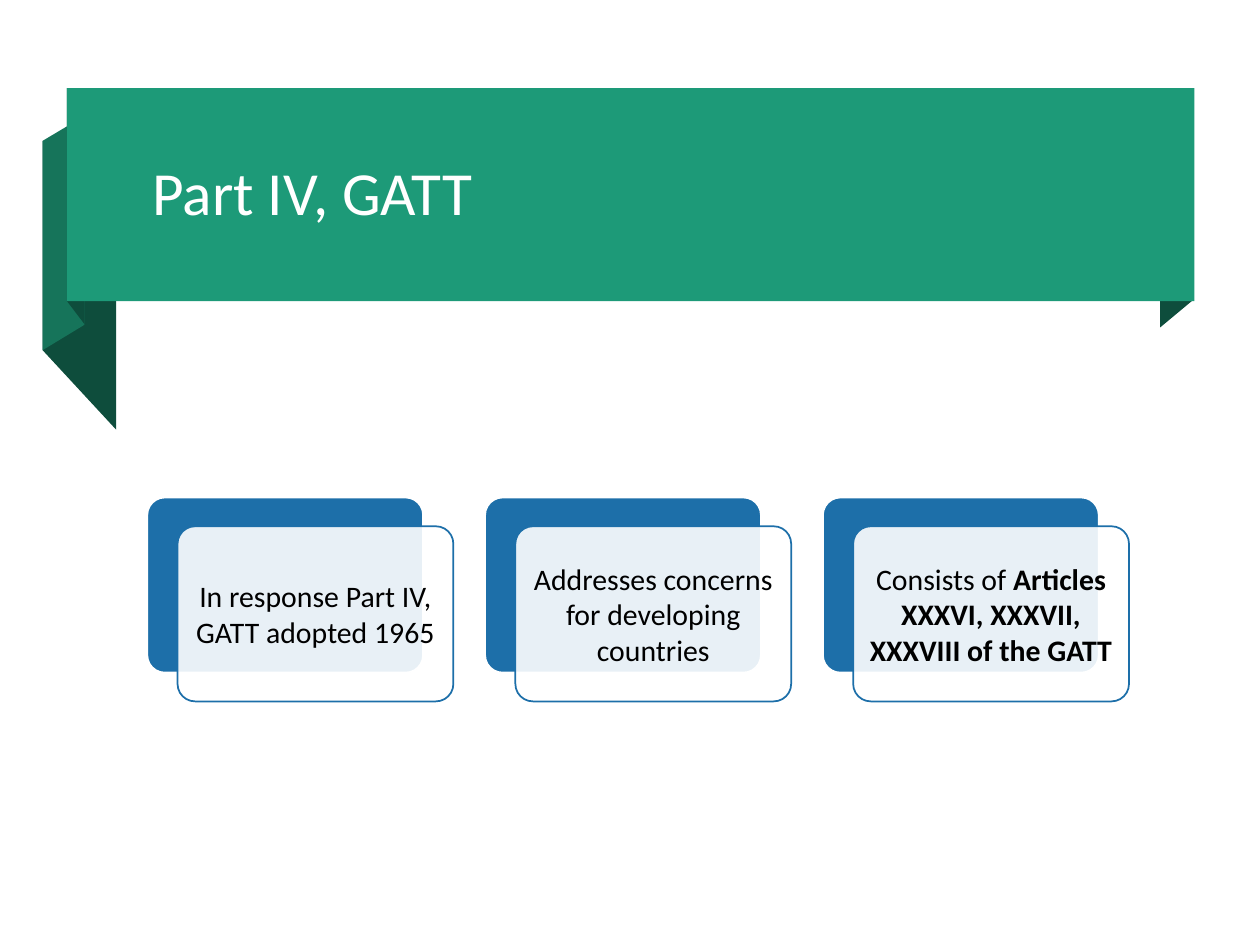
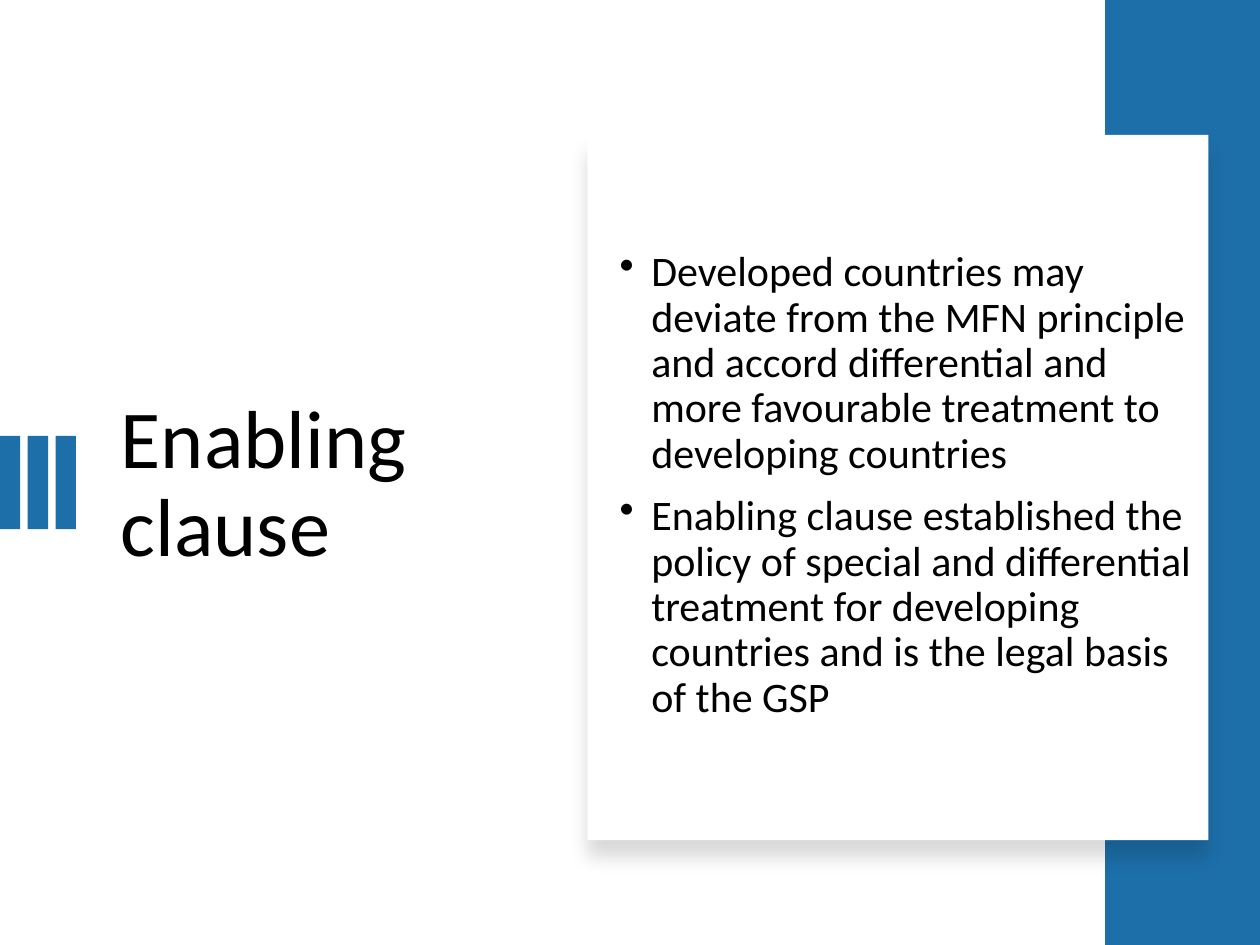
from dataclasses import dataclass
from typing import Optional

import lxml.etree
import pptx
import pptx.dml.color
import pptx.enum.shapes
import pptx.enum.text
import pptx.oxml.ns
import pptx.util

Cm, Pt = pptx.util.Cm, pptx.util.Pt
Kind = pptx.enum.shapes.MSO_SHAPE
Align = pptx.enum.text.PP_ALIGN
qn = pptx.oxml.ns.qn

FONT = "Calibri"
HUES = {
    "white": "FFFFFF",
    "black": "000000",
    "blue": "1D6FA9",
    "green": "1D9A78",
    "shade": "16745A",
    "deep": "0E4D3C",
}


@dataclass(frozen=True)
class Box:
    """Place and size in centimetres."""
    left: float
    top: float
    width: float
    height: float

    def shift(self, right: float, down: float = 0) -> "Box":
        return Box(self.left + right, self.top + down, self.width, self.height)

    def emu(self) -> list:
        return [Cm(v) for v in (self.left, self.top, self.width, self.height)]


@dataclass(frozen=True)
class Fold:
    """A ribbon fold: two upright edges joined by slanted ones."""
    hue: str
    left: float
    left_top: float
    left_end: float
    right: float
    right_top: float
    right_end: float


@dataclass(frozen=True)
class Card:
    text: str
    bold: str = ""


FOLDS = [
    Fold("deep", 23.39, 2.31, 6.6, 24.05, 1.78, 6.05),
    Fold("deep", 0.86, 2.84, 7.06, 2.34, 4.45, 8.66),
    Fold("shade", 0.86, 2.84, 7.06, 1.7, 2.34, 6.55),
    Fold("deep", 1.35, 1.78, 6.07, 1.7, 2.26, 6.53),
]
BANNER = Box(1.35, 1.78, 22.73, 4.29)

CARDS = [
    Card("In response Part IV, GATT adopted 1965"),
    Card("Addresses concerns for developing countries"),
    Card("Consists of ", "Articles XXXVI, XXXVII, XXXVIII of the GATT"),
]
CARD = Box(2.97, 10.03, 5.56, 3.53)
CARD_STEP = 6.81

BAR = Box(0, 8.79, 0.41, 1.88)
BAR_STEP = 0.56
STRIPE = Box(22.28, 0, 3.12, 19.05)
PANEL = Box(11.84, 2.72, 12.52, 14.22)
BODY = Box(12.24, 3.71, 12.04, 12.17)
POINTS = [
    "Developed countries may deviate from the MFN principle and accord "
    "differential and more favourable treatment to developing countries",
    "Enabling clause established the policy of special and differential "
    "treatment for developing countries and is the legal basis of the GSP",
]


def color(hue: str) -> pptx.dml.color.RGBColor:
    return pptx.dml.color.RGBColor.from_string(HUES[hue])


def paint(shape, hue: str, line: Optional[str] = None) -> None:
    shape.shadow.inherit = False
    shape.fill.solid()
    shape.fill.fore_color.rgb = color(hue)
    if line:
        shape.line.color.rgb = color(line)
        shape.line.width = Pt(1)
    else:
        shape.line.fill.background()


def add_rect(slide, box: Box, hue: str, line: Optional[str] = None,
             kind=Kind.RECTANGLE):
    shape = slide.shapes.add_shape(kind, *box.emu())
    paint(shape, hue, line)
    return shape


def add_fold(slide, fold: Fold) -> None:
    build = slide.shapes.build_freeform(Cm(fold.right), Cm(fold.right_end))
    ends = [(fold.left, fold.left_end), (fold.left, fold.left_top),
            (fold.right, fold.right_top)]
    build.add_line_segments([(Cm(x), Cm(y)) for x, y in ends], close=True)
    paint(build.convert_to_shape(), fold.hue)


def set_frame(frame) -> None:
    frame.word_wrap = True
    frame.auto_size = pptx.enum.text.MSO_AUTO_SIZE.NONE
    frame.vertical_anchor = pptx.enum.text.MSO_ANCHOR.MIDDLE


def style(para, size: float, hue: str, align=Align.LEFT, pitch: float = 0.9) -> None:
    para.alignment = align
    para.line_spacing = pitch
    for run in para.runs:
        run.font.name = FONT
        run.font.size = Pt(size)
        run.font.color.rgb = color(hue)


def set_title(slide, text: str, box: Box, size: float, hue: str) -> None:
    """Fill the title placeholder and bring it to the front."""
    title = slide.shapes.title
    title.left, title.top, title.width, title.height = box.emu()
    set_frame(title.text_frame)
    title.text_frame.text = text
    style(title.text_frame.paragraphs[0], size, hue)
    title.element.getparent().append(title.element)


def add_card(slide, card: Card, box: Box) -> None:
    back = add_rect(slide, box, "blue", "white", Kind.ROUNDED_RECTANGLE)
    front = add_rect(slide, box.shift(0.61, 0.58), "white", "blue",
                     Kind.ROUNDED_RECTANGLE)
    for shape in (back, front):
        shape.adjustments[0] = 0.1
    tint = front.element.spPr.find(qn("a:solidFill"))[0]
    lxml.etree.SubElement(tint, qn("a:alpha"), val="90000")

    frame = front.text_frame
    set_frame(frame)
    frame.margin_left = frame.margin_right = Cm(0.08)
    frame.margin_top = frame.margin_bottom = Cm(0.08)
    para = frame.paragraphs[0]
    para.text = card.text
    if card.bold:
        run = para.add_run()
        run.text = card.bold
        run.font.bold = True
    style(para, 17, "black", Align.CENTER, 1.0)


def add_glow(shape) -> None:
    """Cast a soft black shadow straight down."""
    effects = shape.element.spPr.find(qn("a:effectLst"))
    cast = lxml.etree.SubElement(
        effects, qn("a:outerShdw"), blurRad=str(Pt(11)), dist=str(Pt(10)),
        dir="5400000", algn="t", rotWithShape="0")
    tint = lxml.etree.SubElement(cast, qn("a:srgbClr"), val=HUES["black"])
    lxml.etree.SubElement(tint, qn("a:alpha"), val="15000")


def add_points(slide, points: list, box: Box) -> None:
    frame = slide.shapes.add_textbox(*box.emu()).text_frame
    set_frame(frame)
    for i, point in enumerate(points):
        para = frame.paragraphs[0] if i == 0 else frame.add_paragraph()
        para.text = point
        props = para._p.get_or_add_pPr()
        props.set("marL", str(Cm(0.64)))
        props.set("indent", str(Cm(-0.64)))
        lxml.etree.SubElement(props, qn("a:buChar"), char="•")
        if i:
            para.space_before = Pt(10)
        style(para, 24, "black")


def draw_part(slide) -> None:
    for fold in FOLDS:
        add_fold(slide, fold)
    add_rect(slide, BANNER, "green")
    set_title(slide, "Part IV, GATT", Box(2.82, 2.11, 20.83, 3.68), 35, "white")
    for i, card in enumerate(CARDS):
        add_card(slide, card, CARD.shift(i * CARD_STEP))


def draw_clause(slide) -> None:
    set_title(slide, "Enabling clause", Box(2.18, 3.71, 8.1, 12.17), 47, "black")
    for i in range(3):
        add_rect(slide, BAR.shift(i * BAR_STEP), "blue")
    add_rect(slide, STRIPE, "blue")
    add_glow(add_rect(slide, PANEL, "white"))
    add_points(slide, POINTS, BODY)


def main() -> None:
    deck = pptx.Presentation()
    deck.slide_width, deck.slide_height = Cm(25.4), Cm(19.05)
    plain = deck.slide_layouts.get_by_name("Title Only")
    for draw in (draw_part, draw_clause):
        draw(deck.slides.add_slide(plain))
    deck.save("out.pptx")


if __name__ == "__main__":
    main()
